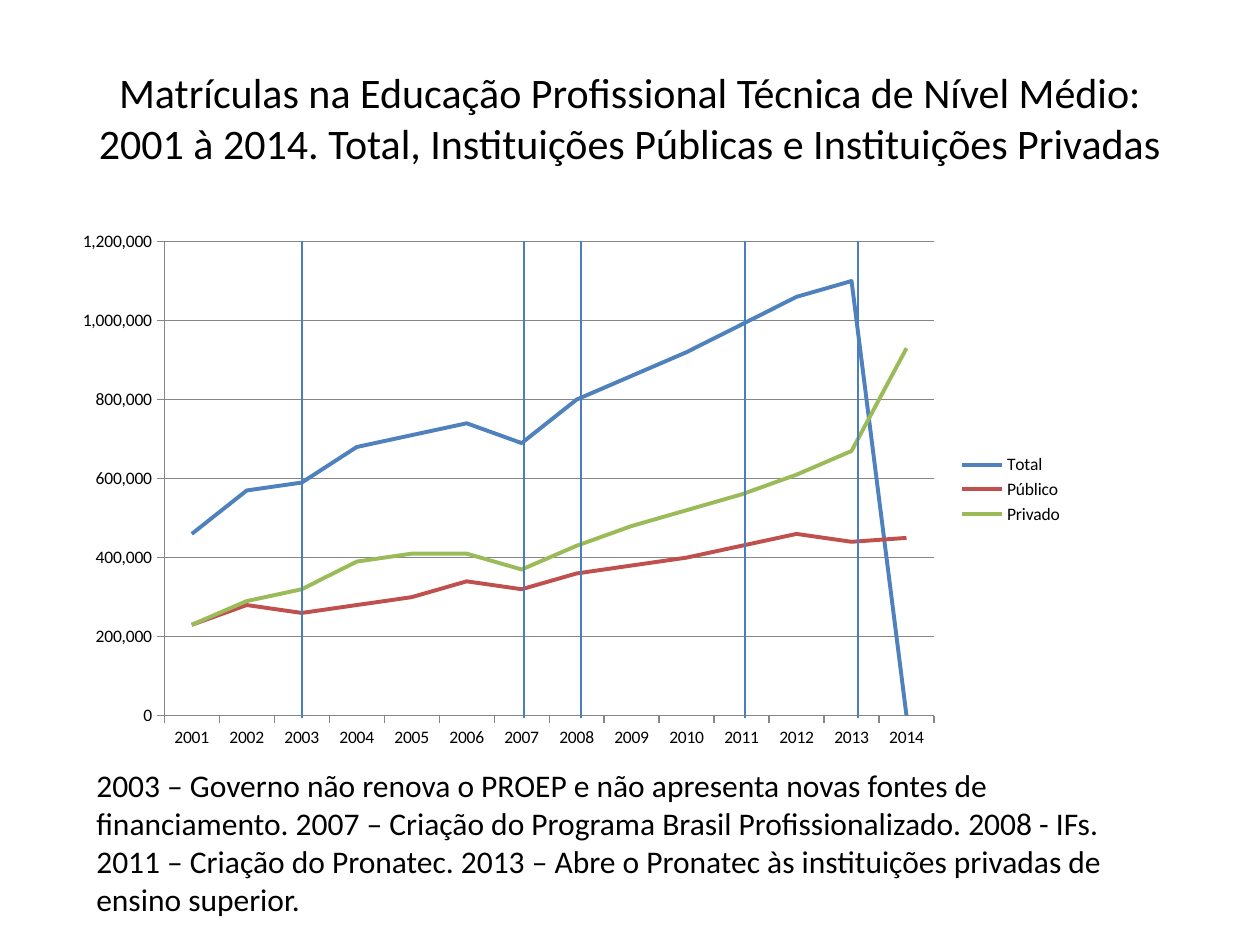
import pptx
import pptx.chart.data
import pptx.dml.color
import pptx.enum.chart
import pptx.enum.shapes
import pptx.enum.text
import pptx.oxml
import pptx.oxml.ns
import pptx.util

PX = 914400 // 126
FONT = "Calibri"
BLACK = pptx.dml.color.RGBColor(0x00, 0x00, 0x00)
GRAY = pptx.dml.color.RGBColor(0x86, 0x86, 0x86)
MARKER_BLUE = pptx.dml.color.RGBColor(0x4B, 0x7E, 0xBC)
BLUE = pptx.dml.color.RGBColor(0x4F, 0x81, 0xBD)
RED = pptx.dml.color.RGBColor(0xC0, 0x50, 0x4D)
GREEN = pptx.dml.color.RGBColor(0x9B, 0xBB, 0x59)

TITLE = ("Matrículas na Educação Profissional Técnica de Nível Médio: "
         "2001 à 2014. Total, Instituições Públicas e Instituições Privadas")
NOTES = ("2003 – Governo não renova o PROEP e não apresenta novas fontes de "
         "financiamento. 2007 – Criação do Programa Brasil Profissionalizado. "
         "2008 - IFs. 2011 – Criação do Pronatec. 2013 – Abre o Pronatec às "
         "instituições privadas de ensino superior.")
THOUSANDS = {
    "Total": (BLUE, [460, 570, 590, 680, 710, 740, 690, 800, 860, 920, 990, 1060, 1100, None]),
    "Público": (RED, [230, 280, 260, 280, 300, 340, 320, 360, 380, 400, 430, 460, 440, 450]),
    "Privado": (GREEN, [230, 290, 320, 390, 410, 410, 370, 430, 480, 520, 560, 610, 670, 930]),
}
PLOT_SHARE = {"x": 0.1, "y": 0.04, "w": 0.76, "h": 0.88}
MARKER_OFFSETS = [239, 461, 682, 518, 795]


def scale(*lengths):
    """Turn px lengths into EMU."""
    return [length * PX for length in lengths]


def add_text(page, box, text, size, align, anchor):
    """Place one wrapped paragraph in the box."""
    frame = page.shapes.add_textbox(*scale(*box)).text_frame
    frame.word_wrap = True
    frame.vertical_anchor = anchor
    para = frame.paragraphs[0]
    para.alignment = align
    span = para.add_run()
    span.text = text
    span.font.name = FONT
    span.font.size = pptx.util.Pt(size)
    span.font.color.rgb = BLACK


def set_plot_layout(chart):
    """Fix the inner plot area and draw missing values as zero."""
    space = chart.element
    plot_area = space.xpath("c:chart/c:plotArea")[0]
    for layout in plot_area.xpath("c:layout"):
        plot_area.remove(layout)
    shares = "".join(f'<c:{side} val="{share}"/>' for side, share in PLOT_SHARE.items())
    plot_area.insert(0, pptx.oxml.parse_xml(
        f'<c:layout {pptx.oxml.ns.nsdecls("c")}><c:manualLayout>'
        '<c:layoutTarget val="inner"/><c:xMode val="edge"/><c:yMode val="edge"/>'
        f'{shares}</c:manualLayout></c:layout>'))
    space.xpath("c:chart/c:dispBlanksAs")[0].set("val", "zero")


def add_enrolment_chart(page, box):
    """Place the line chart of enrolments in the box."""
    data = pptx.chart.data.CategoryChartData(number_format="#,##0")
    data.categories = [str(year) for year in range(2001, 2015)]
    for name, (_, values) in THOUSANDS.items():
        data.add_series(name, [None if value is None else value * 1000 for value in values])
    chart = page.shapes.add_chart(
        pptx.enum.chart.XL_CHART_TYPE.LINE, *scale(*box), data).chart
    chart.has_title = False
    chart.font.name = FONT
    chart.font.size = pptx.util.Pt(10)
    chart.font.color.rgb = BLACK
    chart.has_legend = True
    chart.legend.position = pptx.enum.chart.XL_LEGEND_POSITION.RIGHT
    chart.legend.include_in_layout = False
    chart.plots[0].vary_by_categories = False
    for series, (color, _) in zip(chart.plots[0].series, THOUSANDS.values()):
        series.smooth = False
        series.marker.style = pptx.enum.chart.XL_MARKER_STYLE.NONE
        series.format.line.color.rgb = color
        series.format.line.width = pptx.util.Pt(2.25)
    values_axis = chart.value_axis
    values_axis.minimum_scale, values_axis.maximum_scale = 0, 1200000
    values_axis.major_unit = 200000
    values_axis.has_major_gridlines = True
    values_axis.tick_labels.number_format = "#,##0"
    values_axis.tick_labels.number_format_is_linked = False
    for axis in (chart.category_axis, values_axis):
        axis.major_tick_mark = pptx.enum.chart.XL_TICK_MARK.OUTSIDE
    for part in (chart.category_axis, values_axis, values_axis.major_gridlines):
        part.format.line.color.rgb = GRAY
        part.format.line.width = pptx.util.Pt(0.75)
    set_plot_layout(chart)


def add_year_markers(page, box):
    """Draw the vertical lines of the key years over the chart box."""
    left, top, _, _ = box
    for offset in MARKER_OFFSETS:
        line = page.shapes.add_connector(
            pptx.enum.shapes.MSO_CONNECTOR.STRAIGHT,
            *scale(left + offset, top + 498, left + offset, top + 21))
        line.line.color.rgb = MARKER_BLUE
        line.line.width = pptx.util.Pt(0.75)
        line.element.spPr.append(pptx.oxml.parse_xml(
            f'<a:effectLst {pptx.oxml.ns.nsdecls("a")}/>'))


def main():
    """Build and save the slide."""
    deck = pptx.Presentation()
    deck.slide_width, deck.slide_height = scale(1260, 945)
    page = deck.slides.add_slide(deck.slide_layouts[6])
    align = pptx.enum.text.PP_ALIGN
    anchor = pptx.enum.text.MSO_ANCHOR
    chart_box = (63, 220, 1013, 539)
    add_text(page, (63, 38, 1134, 158), TITLE, 24, align.CENTER, anchor.MIDDLE)
    add_enrolment_chart(page, chart_box)
    add_text(page, (84, 760, 1071, 165), NOTES, 18, align.LEFT, anchor.TOP)
    add_year_markers(page, chart_box)


    deck.save("out.pptx")


if __name__ == "__main__":
    main()
